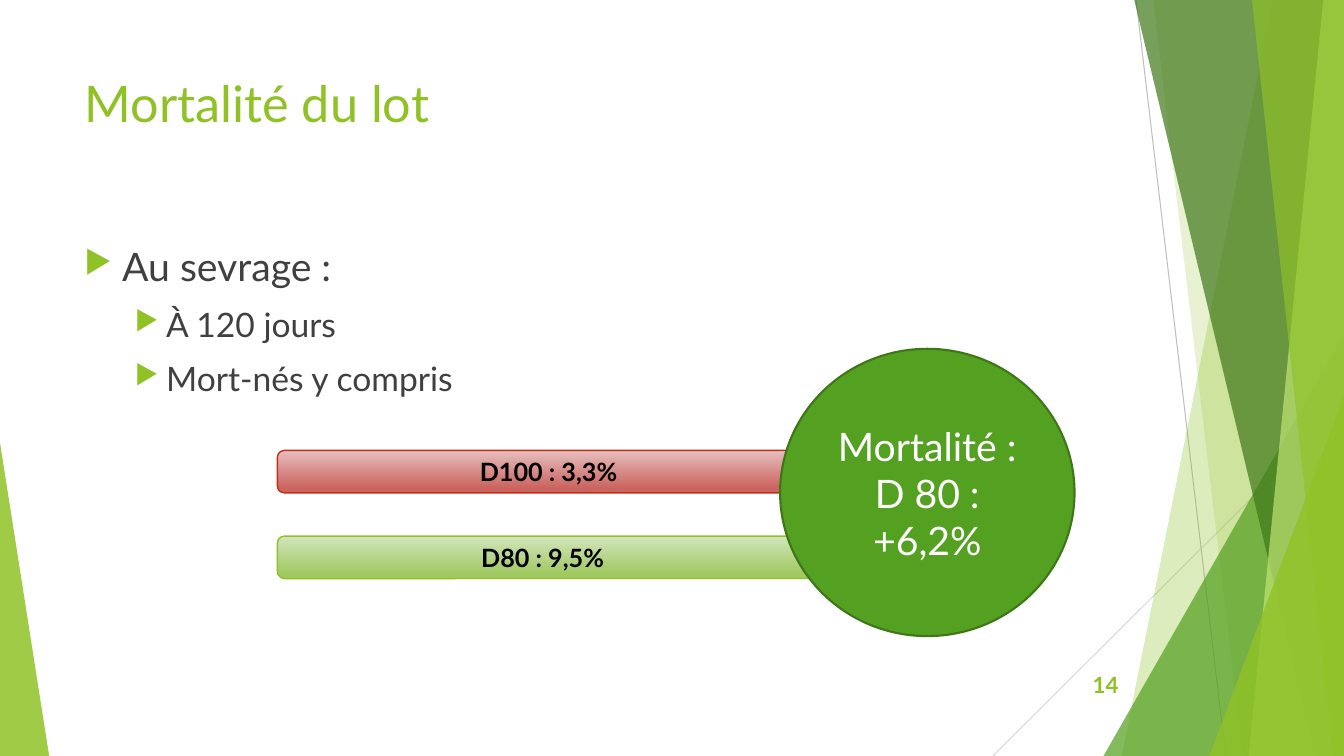
from lxml.etree import SubElement as Sub
from pptx import Presentation
from pptx.dml.color import RGBColor
from pptx.enum.shapes import MSO_CONNECTOR as Link, MSO_SHAPE as Kind
from pptx.enum.text import MSO_ANCHOR as Anchor, PP_ALIGN as Align
from pptx.oxml.ns import qn
from pptx.util import Cm, Pt

LIME = RGBColor(0x90, 0xC2, 0x26)
PALE = RGBColor(0xC0, 0xE4, 0x74)
GREEN = RGBColor(0x54, 0xA0, 0x21)
DARK = RGBColor(0x3F, 0x78, 0x19)
RIM = RGBColor(0x3E, 0x76, 0x18)
RED = RGBColor(0xC4, 0x2F, 0x1A)
ROSE = RGBColor(0xE6, 0xBF, 0xBE)
BRICK = RGBColor(0xCB, 0x65, 0x60)
MINT = RGBColor(0xD3, 0xE5, 0xBE)
LEAF = RGBColor(0xA0, 0xC9, 0x62)
SILVER = RGBColor(0xBF, 0xBF, 0xBF)
MIST = RGBColor(0xD9, 0xD9, 0xD9)
GREY = RGBColor(0x40, 0x40, 0x40)
BLACK = RGBColor(0, 0, 0)
WHITE = RGBColor(0xFF, 0xFF, 0xFF)
WIDE, HIGH = 33.87, 19.05


def write(par, text, size=18, color=BLACK, bold=False, align=Align.LEFT, font="Lato"):
    run = par.add_run()
    run.text = text
    run.font.name, run.font.size, run.font.bold = font, Pt(size), bold
    run.font.color.rgb = color
    par.alignment = align


class Deck:
    """Holds the presentation, its style and the current slide."""

    def __init__(self):
        self.pres = Presentation()
        self.pres.slide_width, self.pres.slide_height = Cm(WIDE), Cm(HIGH)
        self.slide = self.pres.slides.add_slide(self.pres.slide_layouts[6])
        self.shapes = self.slide.shapes

    def line(self, x1, y1, x2, y2, color):
        link = self.shapes.add_connector(Link.STRAIGHT, Cm(x1), Cm(y1), Cm(x2), Cm(y2))
        link.line.color.rgb, link.line.width = color, Pt(0.75)
        Sub(link._element.spPr, qn("a:effectLst"))

    def glass(self, shape, color, alpha):
        shape.shadow.inherit = False
        shape.fill.solid()
        shape.fill.fore_color.rgb = color
        shape.line.fill.background()
        tint = shape._element.spPr.find(qn("a:solidFill"))[0]
        Sub(tint, qn("a:alpha"), val=str(alpha * 1000))

    def wedge(self, top, base, color, alpha):
        pen = self.shapes.build_freeform(Cm(top), Cm(-0.02))
        pen.add_line_segments([(Cm(WIDE), Cm(-0.02)), (Cm(WIDE), Cm(HIGH)), (Cm(base), Cm(HIGH))])
        self.glass(pen.convert_to_shape(), color, alpha)

    def corner(self, x, y, wide, tip, color, alpha):
        shape = self.shapes.add_shape(Kind.ISOSCELES_TRIANGLE, Cm(x), Cm(y), Cm(wide), Cm(HIGH - y))
        shape.adjustments[0] = tip
        self.glass(shape, color, alpha)

    def box(self, x, y, wide, high, anchor=Anchor.TOP):
        frame = self.shapes.add_textbox(Cm(x), Cm(y), Cm(wide), Cm(high)).text_frame
        frame.word_wrap, frame.vertical_anchor = True, anchor
        return frame

    def bullet(self, par, text, left, hang, size, gap):
        props = par._p.get_or_add_pPr()
        props.set("marL", str(Cm(left)))
        props.set("indent", str(Cm(-hang)))
        Sub(Sub(props, qn("a:buClr")), qn("a:srgbClr"), val=str(LIME))
        Sub(props, qn("a:buSzPct"), val="80000")
        Sub(props, qn("a:buChar"), char="▶")
        par.space_before = Pt(gap)
        write(par, text, size=size, color=GREY)

    def solid(self, kind, x, y, wide, high, edge, width):
        shape = self.shapes.add_shape(kind, Cm(x), Cm(y), Cm(wide), Cm(high))
        shape.shadow.inherit = False
        shape.line.color.rgb, shape.line.width = edge, Pt(width)
        frame = shape.text_frame
        frame.word_wrap, frame.vertical_anchor = True, Anchor.MIDDLE
        return shape

    def bar(self, y, text, light, deep, edge, inset):
        shape = self.solid(Kind.ROUNDED_RECTANGLE, 6.99, y, 13.67, 1.07, edge, 1)
        shape.fill.gradient()
        shape.fill.gradient_angle = 270
        for stop, place, color in zip(shape.fill.gradient_stops, (0, 0.88), (light, deep)):
            stop.position, stop.color.rgb = place, color
        frame = shape.text_frame
        frame.margin_right = Cm(inset)
        write(frame.paragraphs[0], text, bold=True, align=Align.CENTER)

    def disc(self, x, y, wide, high, rows):
        shape = self.solid(Kind.OVAL, x, y, wide, high, RIM, 1.5)
        shape.fill.solid()
        shape.fill.fore_color.rgb = GREEN
        frame = shape.text_frame
        for n, text in enumerate(rows):
            par = frame.add_paragraph() if n else frame.paragraphs[0]
            write(par, text, size=28, color=WHITE, align=Align.CENTER)


def main():
    deck = Deck()
    deck.line(28.63, 0, 30.89, HIGH, SILVER)
    deck.line(WIDE, 10.24, 25.02, HIGH, MIST)
    deck.wedge(32.08, 28.27, LIME, 30)
    deck.wedge(29.06, 31.32, LIME, 20)
    deck.corner(27.81, 8.46, 6.05, 1, GREEN, 72)
    deck.wedge(28.58, 33.15, DARK, 70)
    deck.wedge(33.35, 31.47, PALE, 70)
    deck.wedge(31.55, 33.6, LIME, 65)
    deck.corner(30.48, 9.98, 3.39, 1, LIME, 80)
    deck.corner(0, 11.15, 1.24, 0, LIME, 85)

    title = deck.box(1.88, 1.7, 23.88, 3.66)
    write(title.paragraphs[0], "Mortalité du lot", size=36, color=LIME)

    body = deck.box(1.88, 5.99, 23.88, 10.77)
    deck.bullet(body.paragraphs[0], "Au sevrage :", 0.95, 0.95, 28, 0)
    for text in ("À 120 jours", "Mort-nés y compris"):
        par = body.add_paragraph()
        par.level = 1
        deck.bullet(par, text, 2.06, 0.79, 24, 10)

    page = deck.box(26.54, 16.74, 1.9, 1.02, Anchor.MIDDLE)
    write(page.paragraphs[0], "14", size=16, color=LIME, bold=True, align=Align.RIGHT)

    deck.bar(13.51, "D80 : 9,5%", MINT, LEAF, LIME, 0.55)
    deck.bar(11.35, "D100 : 3,3%", ROSE, BRICK, RED, 0.25)
    deck.disc(19.66, 8.79, 7.42, 7.24, ("Mortalité :", "D 80 : +6,2%"))
    deck.pres.save("out.pptx")


if __name__ == "__main__":
    main()
